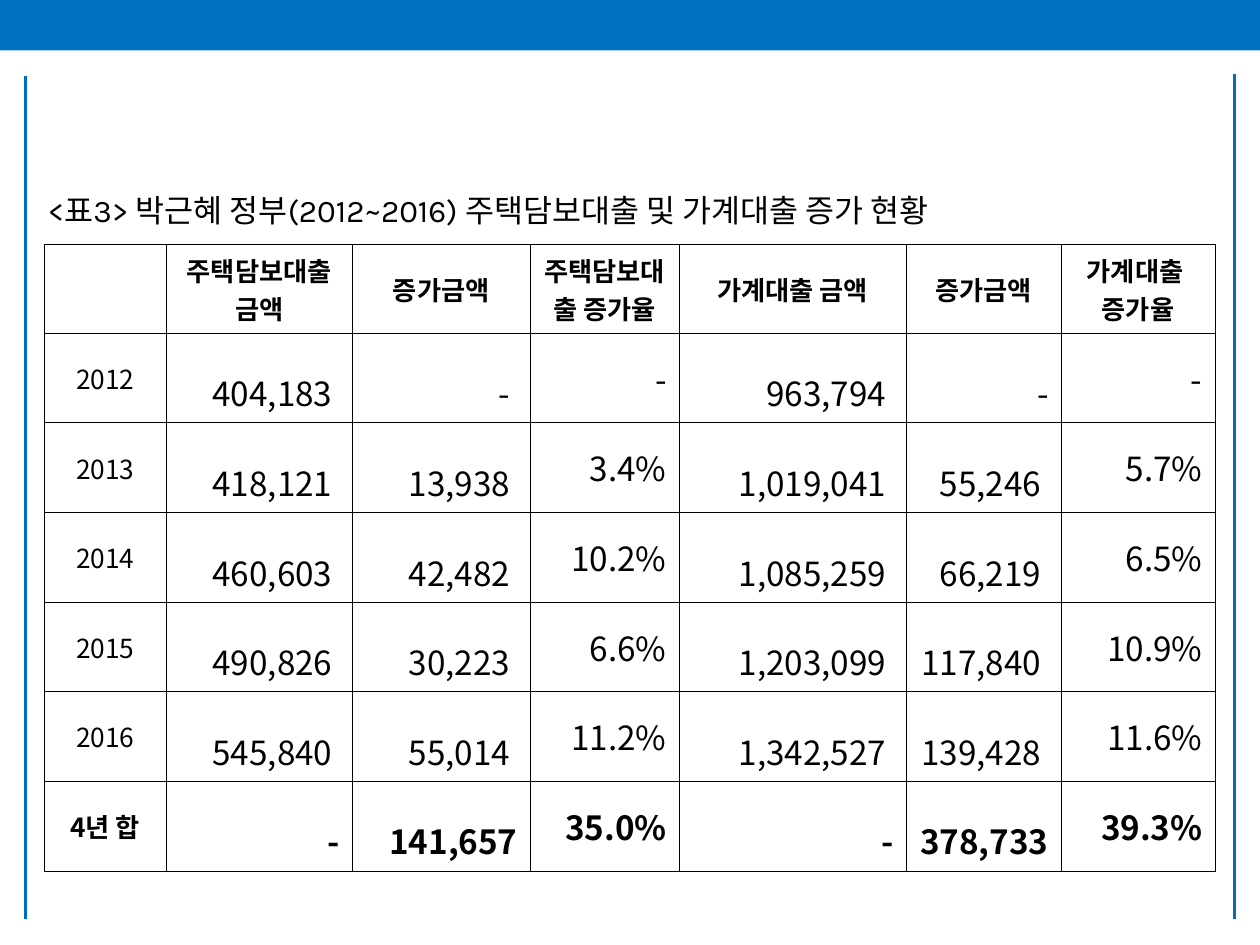
from dataclasses import dataclass
from typing import Any

from lxml import etree
from pptx import Presentation
from pptx.dml.color import RGBColor
from pptx.enum.shapes import MSO_CONNECTOR, MSO_SHAPE
from pptx.enum.text import MSO_ANCHOR, MSO_AUTO_SIZE, PP_ALIGN
from pptx.oxml.ns import qn
from pptx.util import Pt

RECT, LINE = MSO_SHAPE.RECTANGLE, MSO_CONNECTOR.STRAIGHT
MIDDLE, GROW = MSO_ANCHOR.MIDDLE, MSO_AUTO_SIZE.SHAPE_TO_FIT_TEXT
LEFT, CENTER, RIGHT = PP_ALIGN.LEFT, PP_ALIGN.CENTER, PP_ALIGN.RIGHT


@dataclass(frozen=True)
class Theme:
    bar: str = "0070C0"
    rule: str = "006EBC"
    ink: str = "000000"
    latin: str = "Karla"
    hangul: str = "Noto Sans CJK KR"
    title: float = 18
    label: float = 15
    value: float = 19
    thick: float = 0.56
    thin: float = 0.28


@dataclass(frozen=True)
class Rule:
    x: float
    top: float
    end: float


THEME = Theme()
RULES = [Rule(14.4, 43.2, 525), Rule(705.6, 42.5, 525)]

# Table content
WIDTHS = [69.8, 106.3, 101.7, 85.1, 129.7, 88.6, 88]
HEAD = ["", "주택담보대출 금액", "증가금액", "주택담보대출 증가율",
        "가계대출 금액", "증가금액", "가계대출 \n증가율"]
YEARS = [
    ["2012", "404,183 ", "- ", "-", "963,794 ", "-", "-"],
    ["2013", "418,121 ", "13,938 ", "3.4%", "1,019,041 ", "55,246 ", "5.7%"],
    ["2014", "460,603 ", "42,482 ", "10.2%", "1,085,259 ", "66,219 ", "6.5%"],
    ["2015", "490,826 ", "30,223 ", "6.6%", "1,203,099 ", "117,840 ", "10.9%"],
    ["2016", "545,840 ", "55,014 ", "11.2%", "1,342,527 ", "139,428 ", "11.6%"],
]
TOTAL = ["4년 합", "-", "141,657", "35.0%", "-", "378,733", "39.3%"]
RATES = (3, 6)
THIN_LEFT, THIN_RIGHT = (2, 3), (1, 2)


def write(frame: Any, text: str, *, size: float, font: str = THEME.hangul,
          bold: bool = False, align: Any = LEFT, space: float | None = None) -> None:
    for i, part in enumerate(text.split("\n")):
        para = frame.paragraphs[0] if i == 0 else frame.add_paragraph()
        para.alignment = align
        if space:
            para.line_spacing = space
        run = para.add_run()
        run.text = part
        run.font.size, run.font.bold, run.font.name = Pt(size), bold, font
        run.font.color.rgb = RGBColor.from_string(THEME.ink)
        east = etree.SubElement(run.font._element, qn("a:ea"))
        east.set("typeface", THEME.hangul)


def edge(cell: Any, col: int) -> None:
    cell.fill.background()
    props = cell._tc.get_or_add_tcPr()
    for i, side in enumerate("LRTB"):
        thin = (side == "L" and col in THIN_LEFT) or (side == "R" and col in THIN_RIGHT)
        line = etree.Element(qn(f"a:ln{side}"))
        line.set("w", str(int(Pt(THEME.thin if thin else THEME.thick))))
        fill = etree.SubElement(line, qn("a:solidFill"))
        etree.SubElement(fill, qn("a:srgbClr")).set("val", THEME.ink)
        props.insert(i, line)


def add_bar(slide: Any) -> None:
    bar = slide.shapes.add_shape(RECT, Pt(0), Pt(0), Pt(720), Pt(28.8))
    bar.shadow.inherit = False
    bar.fill.solid()
    bar.fill.fore_color.rgb = RGBColor.from_string(THEME.bar)
    bar.line.fill.background()


def add_rule(slide: Any, rule: Rule) -> None:
    line = slide.shapes.add_connector(
        LINE, Pt(rule.x), Pt(rule.top), Pt(rule.x), Pt(rule.end))
    line.line.color.rgb = RGBColor.from_string(THEME.rule)
    line.line.width = Pt(1.75)
    etree.SubElement(line._element.spPr, qn("a:effectLst"))


def add_grid(slide: Any) -> None:
    rows = [HEAD, *YEARS, TOTAL]
    table = slide.shapes.add_table(len(rows), len(WIDTHS), Pt(25.2), Pt(139.7),
                                   Pt(sum(WIDTHS)), Pt(356)).table
    table.first_row = table.horz_banding = False
    for col, width in zip(table.columns, WIDTHS):
        col.width = Pt(width)
    for r, row in enumerate(rows):
        head, total = row is HEAD, row is TOTAL
        table.rows[r].height = Pt(50.2 if head else 51.2)
        for c, text in enumerate(row):
            cell = table.cell(r, c)
            cell.vertical_anchor = MIDDLE
            edge(cell, c)
            if not text:
                continue
            if head or c == 0:
                write(cell.text_frame, text, size=THEME.label, align=CENTER,
                      font=THEME.latin if head else THEME.hangul, bold=head or total)
            else:
                write(cell.text_frame, text, size=THEME.value, align=RIGHT,
                      bold=total, space=None if c in RATES else 1.6)


def add_title(slide: Any) -> None:
    box = slide.shapes.add_textbox(Pt(20.2), Pt(105.8), Pt(581.8), Pt(51.1))
    box.text_frame.word_wrap = False
    box.text_frame.auto_size = GROW
    write(box.text_frame, "<표3> 박근혜 정부(2012~2016) 주택담보대출 및 가계대출 증가 현황",
          size=THEME.title, font=THEME.latin)


def main() -> None:
    deck = Presentation()
    deck.slide_width, deck.slide_height = Pt(720), Pt(540)
    slide = deck.slides.add_slide(deck.slide_layouts[6])
    add_bar(slide)
    add_grid(slide)
    add_title(slide)
    for rule in RULES:
        add_rule(slide, rule)
    deck.save("out.pptx")


if __name__ == "__main__":
    main()
